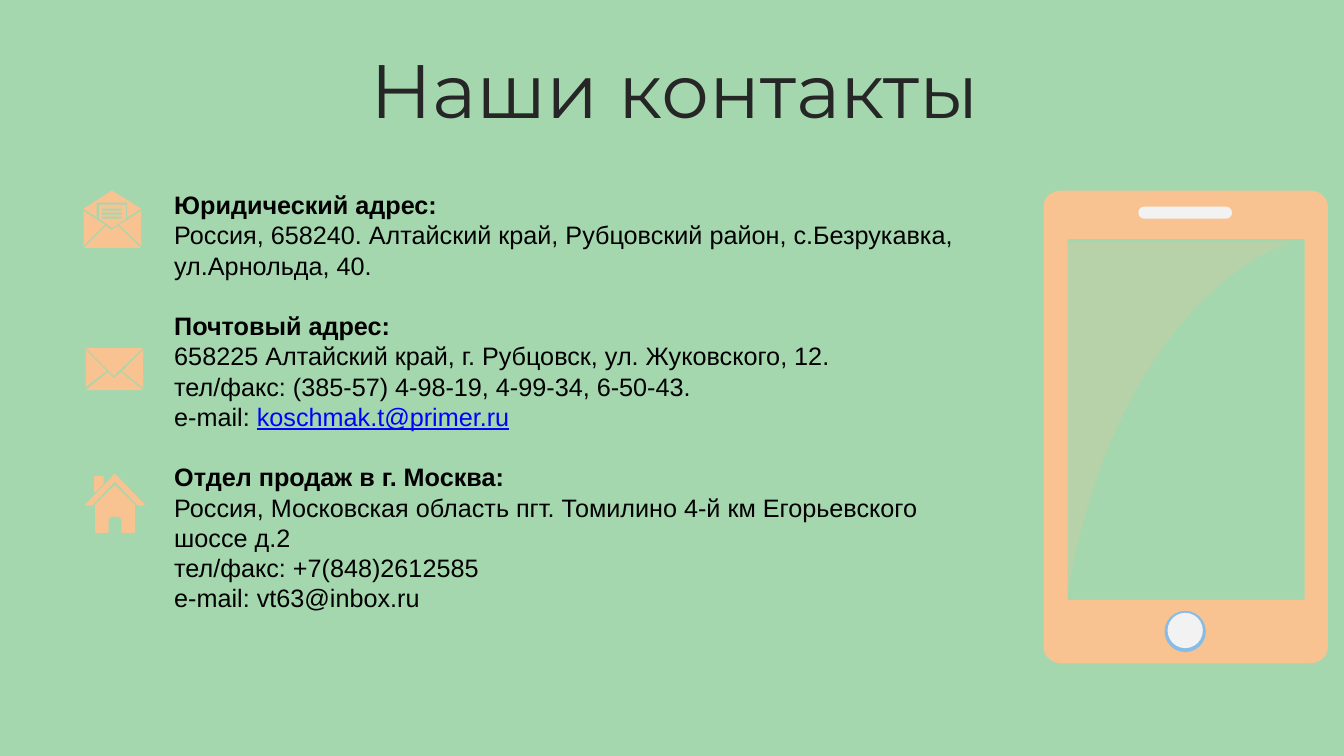
"""Build the contacts slide with three address blocks and a phone drawing."""
import math

import lxml.etree
import pptx
import pptx.dml.color
import pptx.enum.shapes
import pptx.enum.text
import pptx.oxml.ns
import pptx.util

Inches = pptx.util.Inches
Pt = pptx.util.Pt
SHAPES = pptx.enum.shapes.MSO_SHAPE
COLORS = {"bg": "A5D7AF", "peach": "F8C391", "blue": "87BCE6", "light": "F2F2F2",
          "title": "262626", "text": "000000", "link": "0000FF"}
LINE_PITCH = Pt(21.6)


def rect(x1, y1, x2, y2):
    return [(x1, y1), (x2, y1), (x2, y2), (x1, y2)]


def round_rect(x1, y1, x2, y2, rx, ry, steps=10):
    corners = [(x2 - rx, y2 - ry), (x1 + rx, y2 - ry), (x1 + rx, y1 + ry), (x2 - rx, y1 + ry)]
    points = []
    for quarter, (cx, cy) in enumerate(corners):
        for i in range(steps + 1):
            a = (quarter + i / steps) * math.pi / 2
            points.append((cx + rx * math.cos(a), cy + ry * math.sin(a)))
    return points


def bezier(p0, p1, p2, p3, steps=40):
    points = []
    for i in range(steps + 1):
        t = i / steps
        u = 1 - t
        points.append(tuple(u**3 * a + 3 * u * u * t * b + 3 * u * t * t * c + t**3 * d
                            for a, b, c, d in zip(p0, p1, p2, p3)))
    return points


class Deck:
    """Style and current slide."""

    def __init__(self):
        self.prs = pptx.Presentation()
        self.prs.slide_width, self.prs.slide_height = Inches(13.33), Inches(7.5)
        self.s = self.prs.slides.add_slide(self.prs.slide_layouts[6])
        fill = self.s.background.fill
        fill.solid()
        fill.fore_color.rgb = self.rgb("bg")

    def rgb(self, name):
        return pptx.dml.color.RGBColor.from_string(COLORS[name])

    def paint(self, sp, color, line=None, alpha=None):
        sp.shadow.inherit = False
        sp.fill.solid()
        sp.fill.fore_color.rgb = self.rgb(color)
        if alpha:
            clr = sp.fill._xPr.find(".//" + pptx.oxml.ns.qn("a:srgbClr"))
            lxml.etree.SubElement(clr, pptx.oxml.ns.qn("a:alpha"), val=str(alpha * 1000))
        if line:
            sp.line.color.rgb = self.rgb(color)
            sp.line.width = Pt(line)
        else:
            sp.line.fill.background()

    def shape(self, kind, x, y, w, h, color):
        sp = self.s.shapes.add_shape(kind, Inches(x), Inches(y), Inches(w), Inches(h))
        self.paint(sp, color)
        return sp

    def free(self, contours, color="peach", line=None, alpha=None):
        builder = None
        for contour in contours:
            points = [(Inches(x), Inches(y)) for x, y in contour]
            if builder is None:
                builder = self.s.shapes.build_freeform(*points[0])
            else:
                builder.move_to(*points[0])
            builder.add_line_segments(points[1:], close=True)
        self.paint(builder.convert_to_shape(), color, line, alpha)

    def box(self, x, y, w, h, anchor):
        tf = self.s.shapes.add_textbox(Inches(x), Inches(y), Inches(w), Inches(h)).text_frame
        tf.word_wrap = True
        tf.vertical_anchor = anchor
        return tf

    def font(self, r, name, size, color, bold=False):
        r.font.name, r.font.size, r.font.bold = name, Pt(size), bold
        r.font.color.rgb = self.rgb(color)

    def title(self, text):
        tf = self.box(0.36, 0.54, 12.66, 0.79, pptx.enum.text.MSO_ANCHOR.MIDDLE)
        p = tf.paragraphs[0]
        p.text = text
        p.alignment = pptx.enum.text.PP_ALIGN.CENTER
        p.line_spacing = 0.9
        self.font(p.runs[0], "Montserrat", 54, "title")

    def contacts(self, blocks):
        tf = self.box(1.63, 1.83, 8.23, 4.95, pptx.enum.text.MSO_ANCHOR.TOP)
        for i, (lines, link) in enumerate(blocks):
            p = tf.add_paragraph() if i else tf.paragraphs[0]
            p.text = "\v".join(lines)
            p.line_spacing = LINE_PITCH
            if i:
                p.space_before = LINE_PITCH
            for n, r in enumerate(p.runs):
                self.font(r, "Arial", 18, "text", bold=n == 0)
            if link:
                r = p.add_run()
                r.text = link
                self.font(r, "Arial", 18, "link")
                r.font.underline = True

    def phone(self):
        self.free([round_rect(10.35, 1.89, 13.17, 6.58, 0.18, 0.16),
                   rect(10.59, 2.37, 12.94, 5.95)])
        self.shape(SHAPES.OVAL, 11.55, 6.06, 0.41, 0.41, "blue")
        glare = bezier((10.58, 5.94), (10.93, 3.81), (11.96, 2.7), (12.81, 2.4))
        self.free([[(10.58, 2.4)] + glare], alpha=22)
        speaker = self.shape(SHAPES.ROUNDED_RECTANGLE, 11.29, 2.05, 0.93, 0.12, "light")
        speaker.adjustments[0] = 0.5
        self.shape(SHAPES.OVAL, 11.58, 6.08, 0.35, 0.35, "light")

    def closed_envelope(self):
        self.free([
            [(1.2, 3.69), (1.42, 3.87), (0.85, 3.87), (1.07, 3.69), (1.13, 3.75)],
            [(1.42, 3.47), (1.42, 3.85), (1.21, 3.68)],
            [(0.85, 3.47), (1.06, 3.68), (0.85, 3.84)],
            [(0.85, 3.45), (1.42, 3.45), (1.13, 3.73)]])

    def open_envelope(self):
        text_bars = [rect(1.01, y, 1.21, y + 0.02) for y in (2.07, 2.11, 2.15)]
        self.free([
            [(1.05, 2.24), (1.11, 2.28), (1.17, 2.24), (1.4, 2.46), (0.83, 2.46)],
            [(1.4, 2.09), (1.4, 2.44), (1.18, 2.23), (1.36, 2.12)],
            [(0.83, 2.09), (0.93, 2.16), (1.04, 2.23), (0.83, 2.44)],
            [(0.98, 2.03), (1.25, 2.03), (1.25, 2.17), (1.12, 2.26), (1.11, 2.26), (0.98, 2.17)],
            [(1.11, 1.89), (1.4, 2.07), (1.26, 2.16), (1.26, 2.01), (0.96, 2.01),
             (0.96, 2.16), (0.83, 2.07)]] + text_bars)

    def house(self):
        self.free([
            [(1.14, 4.82), (1.33, 5.01), (1.33, 5.28), (1.21, 5.28), (1.21, 5.16), (1.2, 5.13),
             (1.17, 5.12), (1.1, 5.12), (1.08, 5.13), (1.07, 5.16), (1.07, 5.28),
             (0.95, 5.28), (0.95, 5.01)],
            [(0.94, 4.73), (1.02, 4.73), (1.02, 4.8), (0.94, 4.88)],
            [(1.14, 4.71), (1.43, 5.01), (1.37, 5.01), (1.14, 4.77)],
            [(1.14, 4.71), (1.14, 4.77), (0.91, 5.01), (0.85, 5.01)]], line=1)


def main():
    deck = Deck()
    deck.title("Наши контакты")
    deck.phone()
    deck.contacts([
        (["Юридический адрес:",
          "Россия, 658240. Алтайский край, Рубцовский район, с.Безрукавка, ул.Арнольда, 40."], None),
        (["Почтовый адрес:",
          "658225 Алтайский край, г. Рубцовск, ул. Жуковского, 12.",
          "тел/факс: (385-57) 4-98-19, 4-99-34, 6-50-43.",
          "e-mail: "], "koschmak.t@primer.ru"),
        (["Отдел продаж в г. Москва:",
          "Россия, Московская область пгт. Томилино 4-й км Егорьевского шоссе д.2",
          "тел/факс: +7(848)2612585",
          "e-mail: vt63@inbox.ru"], None)])
    deck.closed_envelope()
    deck.house()
    deck.open_envelope()
    deck.prs.save("out.pptx")


if __name__ == "__main__":
    main()
